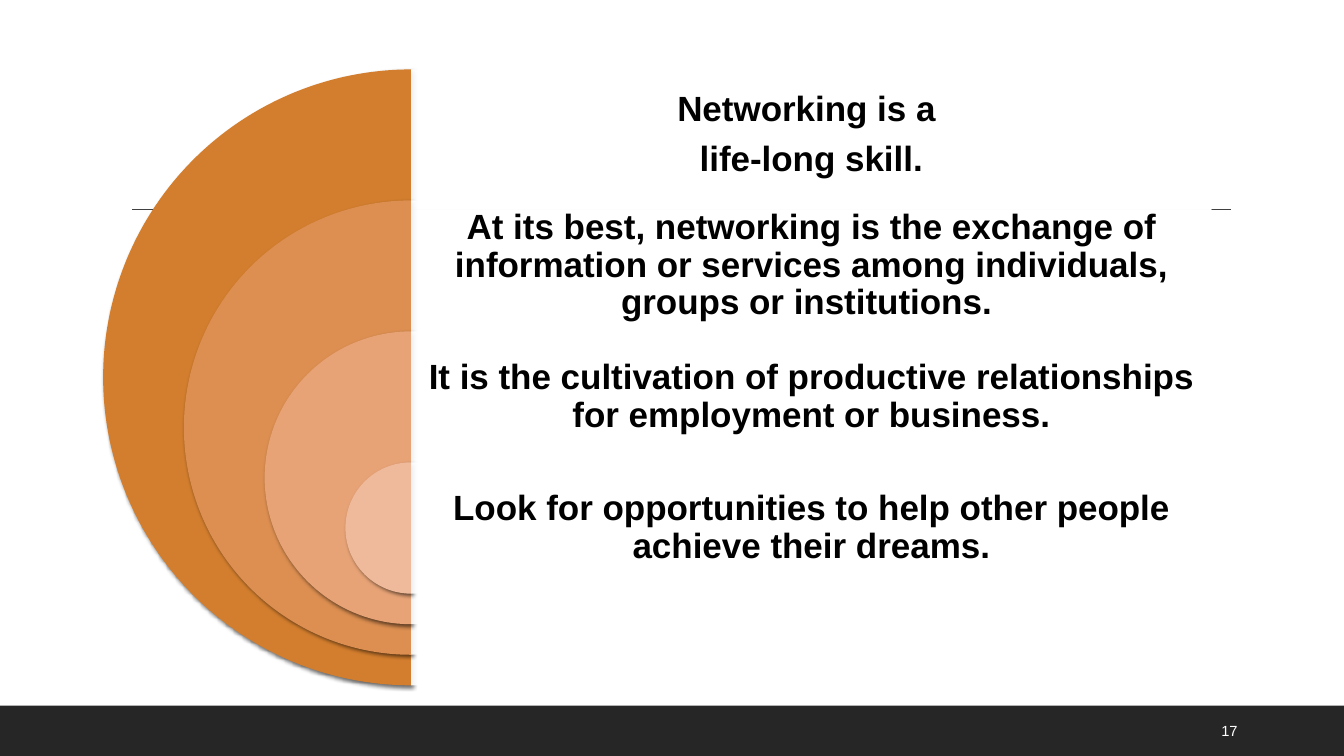
from lxml.etree import SubElement
from pptx import Presentation
from pptx.dml.color import RGBColor
from pptx.enum.shapes import MSO_CONNECTOR, MSO_SHAPE
from pptx.enum.text import MSO_ANCHOR, PP_ALIGN
from pptx.oxml.ns import qn
from pptx.util import Cm, Pt

WHITE = RGBColor(0xFF, 0xFF, 0xFF)
BLACK = RGBColor(0x00, 0x00, 0x00)
GREY = RGBColor(0x40, 0x40, 0x40)
DARK = RGBColor(0x26, 0x26, 0x26)
TONES = [
    RGBColor(0xD3, 0x7E, 0x2E),
    RGBColor(0xDD, 0x8F, 0x51),
    RGBColor(0xE7, 0xA3, 0x76),
    RGBColor(0xEF, 0xB9, 0x9B),
]
POINTS = [
    "Networking is a \nlife-long skill.",
    "At its best, networking is the exchange of information or services "
    "among individuals, groups or institutions. ",
    "It is the cultivation of productive relationships for employment or business.",
    "Look for opportunities to help other people achieve their dreams.",
]
WIDE, HIGH = 33.87, 19.05
MID, TOP = 10.36, 1.75       # flat edge of the half discs, top of the first
ROW, SHRINK = 3.3, 4.07      # row height, loss of diameter per disc
DISC, PANEL = 15.52, 20.17   # first diameter, panel width


def add_solid(kind, left, top, width, height, color):
    """Add a borderless shape in one colour; lengths in cm."""
    shape = slide.shapes.add_shape(kind, Cm(left), Cm(top), Cm(width), Cm(height))
    shape.shadow.inherit = False
    shape.fill.solid()
    shape.fill.fore_color.rgb = color
    shape.line.fill.background()
    return shape


def add_text(left, top, width, height, text, size, color):
    box = slide.shapes.add_textbox(Cm(left), Cm(top), Cm(width), Cm(height))
    frame = box.text_frame
    frame.word_wrap = True
    frame.vertical_anchor = MSO_ANCHOR.MIDDLE
    frame.text = text
    for para in frame.paragraphs:
        for run in para.runs:
            run.font.name = "Arial"
            run.font.size = Pt(size)
            run.font.color.rgb = color
    return frame


deck = Presentation()
deck.slide_width, deck.slide_height = Cm(WIDE), Cm(HIGH)
slide = deck.slides.add_slide(deck.slide_layouts[6])
slide.background.fill.solid()
slide.background.fill.fore_color.rgb = WHITE

# Rule, footer band and slide number
rule = slide.shapes.add_connector(
    MSO_CONNECTOR.STRAIGHT, Cm(3.33), Cm(5.28), Cm(31.01), Cm(5.28))
rule.line.color.rgb = GREY
rule.line.width = Pt(1)
SubElement(rule.element.spPr, qn("a:effectLst"))
add_solid(MSO_SHAPE.RECTANGLE, 0, 17.78, WIDE, 1.27, DARK)
add_text(30.53, 17.91, 2.16, 1.02, "17", 10.5, WHITE)

# Nested half discs, each with a panel and its text
for i, (tone, point) in enumerate(zip(TONES, POINTS)):
    top = TOP + i * ROW
    size = DISC - i * SHRINK

    disc = add_solid(MSO_SHAPE.PIE, MID - size / 2, top, size, size, tone)
    disc.adjustments[0], disc.adjustments[1] = 54, 162
    effect = disc.element.spPr.find(qn("a:effectLst"))
    shade = SubElement(effect, qn("a:outerShdw"), blurRad=str(Pt(3)),
                       dist=str(Pt(2)), dir="2700000", rotWithShape="0")
    black = SubElement(shade, qn("a:srgbClr"), val=str(BLACK))
    SubElement(black, qn("a:alpha"), val="60000")

    panel = add_solid(MSO_SHAPE.RECTANGLE, MID, top, PANEL, size, WHITE)
    white = panel.element.spPr.find(qn("a:solidFill"))[0]
    SubElement(white, qn("a:alpha"), val="90000")

    frame = add_text(MID, top, PANEL, ROW, point, 25, BLACK)
    frame.margin_top = frame.margin_bottom = Cm(0.25)
    for para in frame.paragraphs:
        para.alignment = PP_ALIGN.CENTER
        para.line_spacing = 0.9
        para.space_after = Pt(8.75)
        para.font.bold = True
        for run in para.runs:
            run.font.bold = True

deck.save("out.pptx")
